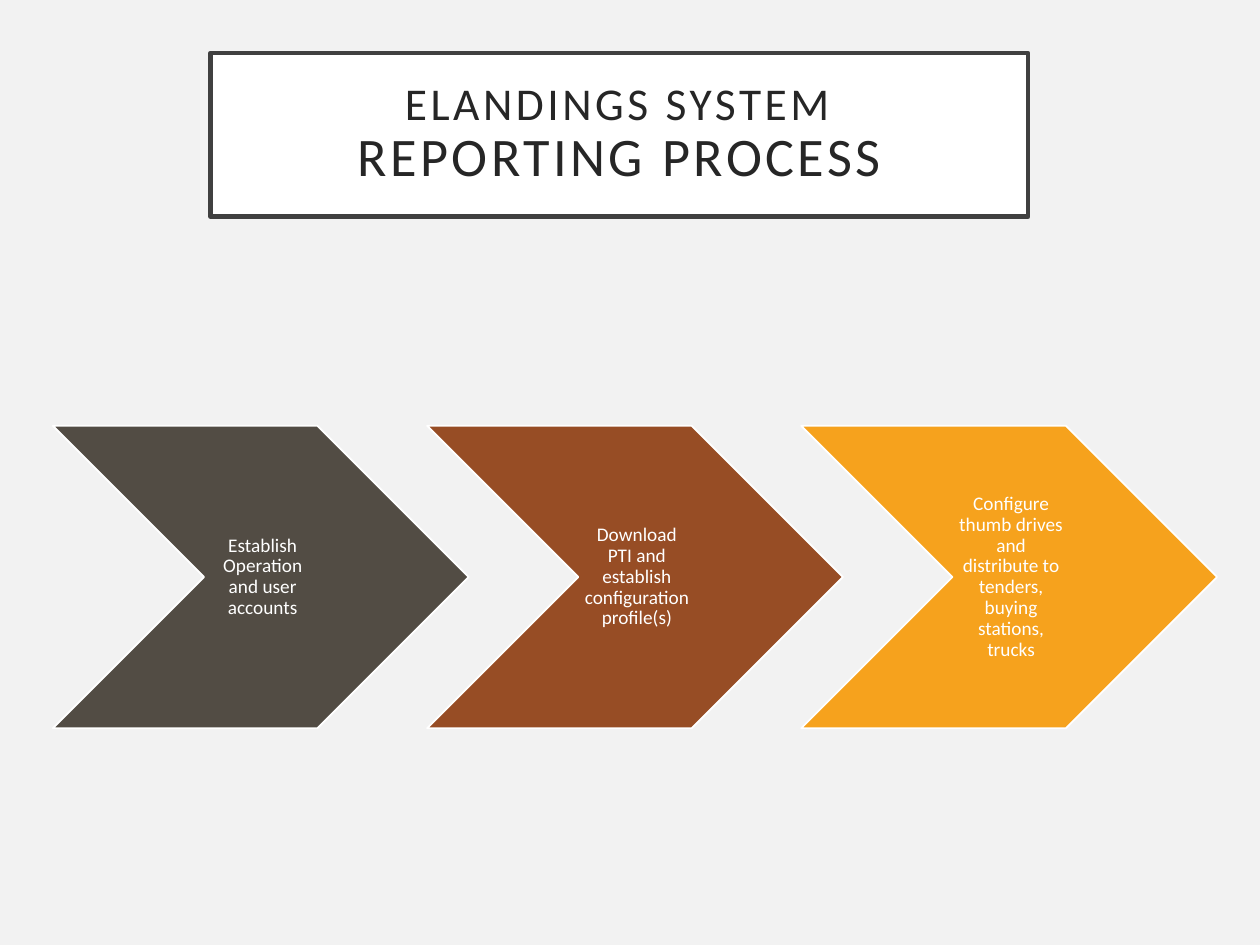
from pptx import Presentation
from pptx.dml.color import RGBColor
from pptx.enum.shapes import MSO_SHAPE
from pptx.enum.text import MSO_ANCHOR, MSO_AUTO_SIZE, PP_ALIGN
from pptx.util import Inches, Pt

CHEVRON = MSO_SHAPE.CHEVRON
MIDDLE = MSO_ANCHOR.MIDDLE
CENTER = PP_ALIGN.CENTER
NO_AUTOFIT = MSO_AUTO_SIZE.NONE

BACKGROUND = RGBColor(0xF2, 0xF2, 0xF2)
WHITE = RGBColor(0xFF, 0xFF, 0xFF)
TITLE_BORDER = RGBColor(0x40, 0x40, 0x40)
TITLE_TEXT = RGBColor(0x26, 0x26, 0x26)
BROWN = RGBColor(0x52, 0x4C, 0x44)
RUST = RGBColor(0x97, 0x4D, 0x25)
AMBER = RGBColor(0xF6, 0xA2, 0x1D)

FONT = "Calibri"
STEP_LEFT, STEP_TOP, STEP_PITCH = 0.42, 3.38, 2.97
STEP_WIDTH, STEP_HEIGHT = 3.3, 2.4
LABEL_OFFSET, LABEL_WIDTH = 1.2, 0.9
STEPS = [
    (BROWN, "Establish Operation and user accounts"),
    (RUST, "Download PTI and establish configuration profile(s)"),
    (AMBER, "Configure thumb drives and distribute to tenders, "
            "buying stations, trucks"),
]


def paint(shape, fill, border, width):
    """Give a shape a solid fill and outline."""
    shape.fill.solid()
    shape.fill.fore_color.rgb = fill
    shape.line.color.rgb = border
    shape.line.width = Pt(width)


def format_frame(frame, left, top, right, bottom):
    """Set wrapping, middle anchoring and insets of a text frame."""
    frame.word_wrap = True
    frame.auto_size = NO_AUTOFIT
    frame.vertical_anchor = MIDDLE
    frame.margin_left, frame.margin_top = Inches(left), Inches(top)
    frame.margin_right, frame.margin_bottom = Inches(right), Inches(bottom)


def format_paragraph(para, color):
    """Centre a paragraph and set its typeface and colour."""
    para.alignment = CENTER
    para.line_spacing = 0.9
    para.font.name = FONT
    para.font.color.rgb = color


def add_title(page, lines):
    """Fill the title placeholder with lines of differing size."""
    title = page.shapes.title
    title.left, title.top = Inches(1.67), Inches(0.42)
    title.width, title.height = Inches(6.49), Inches(1.3)
    paint(title, WHITE, TITLE_BORDER, 2.5)
    format_frame(title.text_frame, 0.2, 0.2, 0.2, 0.2)
    para = title.text_frame.paragraphs[0]
    format_paragraph(para, TITLE_TEXT)
    for index, (text, size) in enumerate(lines):
        if index:
            para.add_line_break()
        span = para.add_run()
        span.text = text
        span.font.size = Pt(size)
        span.font._element.set("spc", "200")


def add_step(page, column, color, text):
    """Draw one process chevron with its label."""
    left = STEP_LEFT + column * STEP_PITCH
    chevron = page.shapes.add_shape(
        CHEVRON, Inches(left), Inches(STEP_TOP),
        Inches(STEP_WIDTH), Inches(STEP_HEIGHT))
    chevron.shadow.inherit = False
    paint(chevron, color, WHITE, 1)
    label = page.shapes.add_textbox(
        Inches(left + LABEL_OFFSET), Inches(STEP_TOP),
        Inches(LABEL_WIDTH), Inches(STEP_HEIGHT))
    format_frame(label.text_frame, 0.05, 0.02, 0.02, 0.02)
    para = label.text_frame.paragraphs[0]
    para.text = text
    format_paragraph(para, WHITE)
    para.font.size = Pt(11)


def main():
    """Build the reporting process slide."""
    deck = Presentation()
    deck.slide_width, deck.slide_height = Inches(10), Inches(7.5)
    page = deck.slides.add_slide(deck.slide_layouts[5])
    page.background.fill.solid()
    page.background.fill.fore_color.rgb = BACKGROUND
    add_title(page, [("ELANDINGS SYSTEM", 26), ("REPORTING PROCESS", 31)])
    for column, (color, text) in enumerate(STEPS):
        add_step(page, column, color, text)
    deck.save("out.pptx")


if __name__ == "__main__":
    main()
